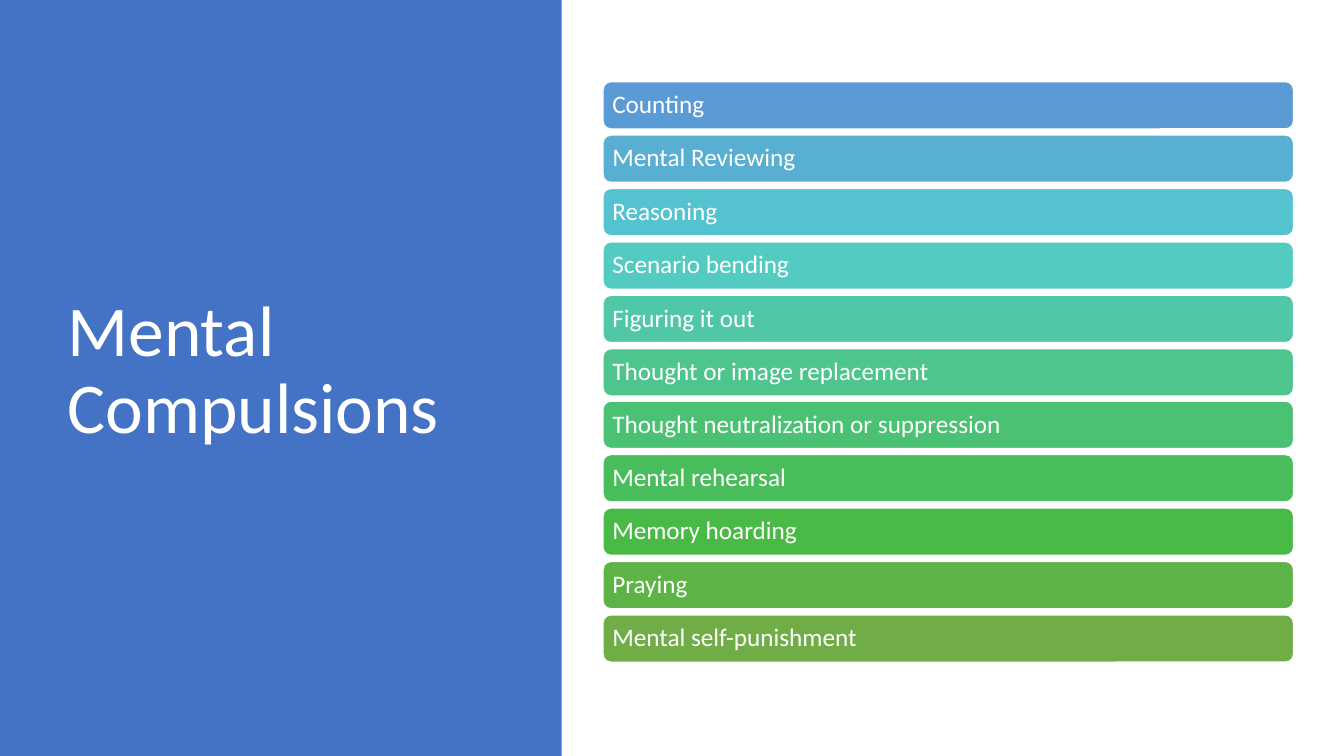
from dataclasses import dataclass

from pptx import Presentation
from pptx.dml.color import RGBColor
from pptx.enum.shapes import MSO_SHAPE
from pptx.enum.text import MSO_ANCHOR, MSO_AUTO_SIZE, PP_ALIGN
from pptx.shapes.autoshape import Shape
from pptx.slide import Slide
from pptx.text.text import TextFrame
from pptx.util import Emu, Pt

PX = 9144  # 100 px to the inch
FONT = "Calibri"
COLORS = {
    "white": "FFFFFF",
    "panel": "4472C4",
    "blue": "5B9BD5",
    "sky": "58AFD2",
    "cyan": "55C3CF",
    "turquoise": "53CBC1",
    "aqua": "50C8A7",
    "mint": "4DC58D",
    "jade": "4BC174",
    "emerald": "49BD5B",
    "green": "4ABA46",
    "leaf": "5EB347",
    "olive": "70AD47",
}


@dataclass(frozen=True)
class Bar:
    label: str
    color: str


BARS = [
    Bar("Counting", "blue"),
    Bar("Mental Reviewing", "sky"),
    Bar("Reasoning", "cyan"),
    Bar("Scenario bending", "turquoise"),
    Bar("Figuring it out", "aqua"),
    Bar("Thought or image replacement", "mint"),
    Bar("Thought neutralization or suppression", "jade"),
    Bar("Mental rehearsal", "emerald"),
    Bar("Memory hoarding", "green"),
    Bar("Praying", "leaf"),
    Bar("Mental self-punishment", "olive"),
]
BAR_LEFT, BAR_WIDTH, BAR_HEIGHT = 598, 685, 47
FIRST_TOP, LAST_TOP = 81, 610


def px(n: int) -> Emu:
    return Emu(n * PX)


def rgb(name: str) -> RGBColor:
    return RGBColor.from_string(COLORS[name])


def write(tf: TextFrame, text: str, *, size: int, color: str = "white",
          inset: int | None = None) -> None:
    tf.word_wrap = True
    tf.auto_size = MSO_AUTO_SIZE.NONE
    tf.vertical_anchor = MSO_ANCHOR.MIDDLE
    if inset is not None:
        tf.margin_left = tf.margin_right = px(inset)
        tf.margin_top = tf.margin_bottom = px(inset)
    p = tf.paragraphs[0]
    p.alignment = PP_ALIGN.LEFT
    p.line_spacing = 0.9
    r = p.add_run()
    r.text = text
    r.font.name = FONT
    r.font.size = Pt(size)
    r.font.color.rgb = rgb(color)


def add_box(slide: Slide, kind: MSO_SHAPE, left: int, top: int, width: int,
            height: int, fill: str, line: str | None = None) -> Shape:
    sp = slide.shapes.add_shape(kind, px(left), px(top), px(width), px(height))
    sp.shadow.inherit = False
    sp.fill.solid()
    sp.fill.fore_color.rgb = rgb(fill)
    if line:
        sp.line.color.rgb = rgb(line)
        sp.line.width = Pt(1)
    else:
        sp.line.fill.background()
    return sp


def add_title(slide: Slide, text: str) -> None:
    title = slide.shapes.title
    title.left, title.top = px(57), px(68)
    title.width, title.height = px(416), px(602)
    write(title.text_frame, text, size=51)


def add_bars(slide: Slide, bars: list[Bar]) -> None:
    pitch = (LAST_TOP - FIRST_TOP) / (len(bars) - 1)
    for i, bar in enumerate(bars):
        sp = add_box(slide, MSO_SHAPE.ROUNDED_RECTANGLE, BAR_LEFT,
                     round(FIRST_TOP + i * pitch), BAR_WIDTH, BAR_HEIGHT,
                     bar.color, line="white")
        write(sp.text_frame, bar.label, size=18, inset=7)


def main() -> None:
    prs = Presentation()
    prs.slide_width, prs.slide_height = px(1333), px(750)
    slide = prs.slides.add_slide(prs.slide_layouts[5])

    # Left panel, placed behind the title
    panel = add_box(slide, MSO_SHAPE.RECTANGLE, 0, 0, 557, 750, "panel")
    slide.shapes.title.element.addprevious(panel.element)
    add_title(slide, "Mental Compulsions")

    # List of compulsions
    add_bars(slide, BARS)

    prs.save("out.pptx")


if __name__ == "__main__":
    main()
